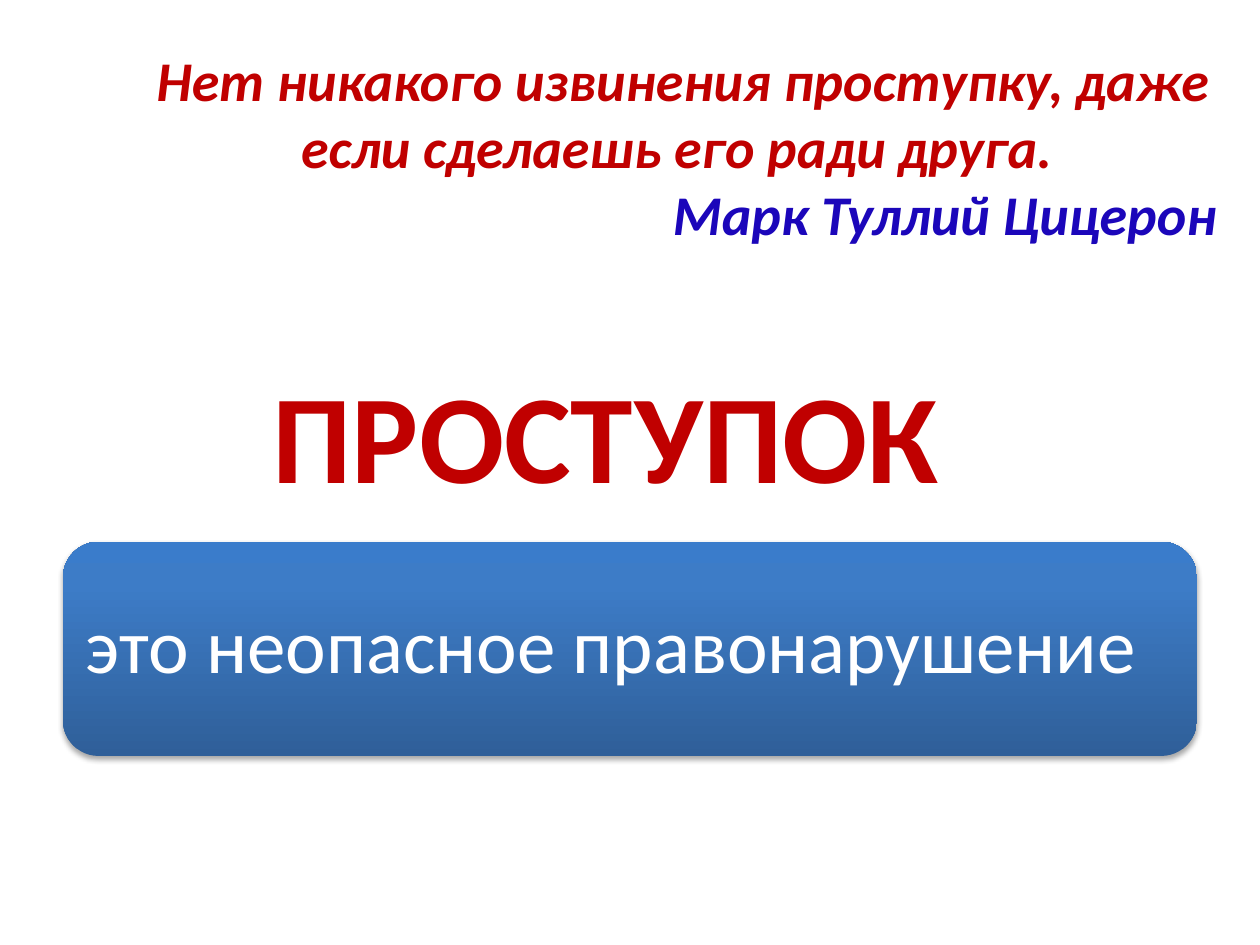
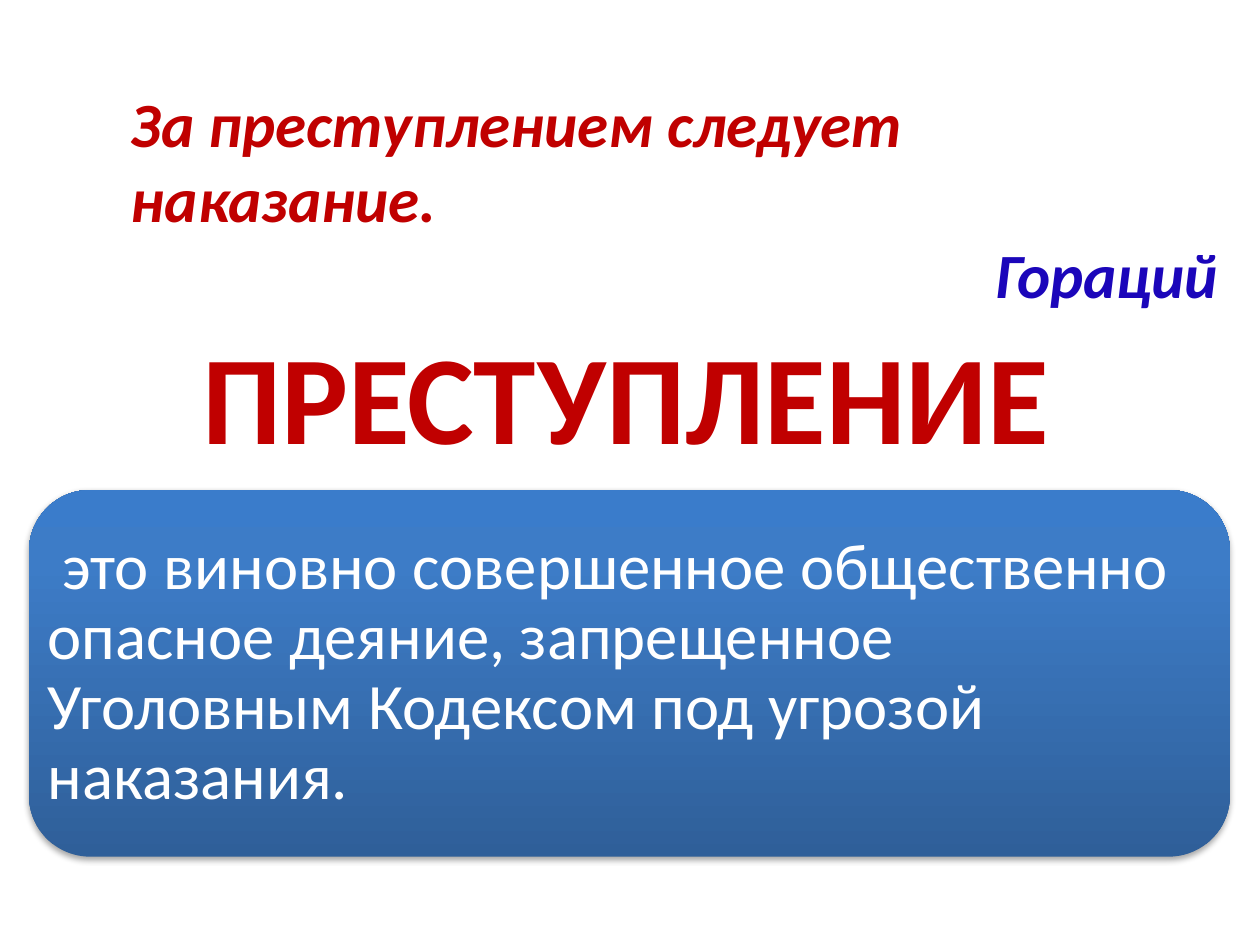
from dataclasses import dataclass

from lxml.etree import SubElement
from pptx import Presentation
from pptx.dml.color import RGBColor
from pptx.enum.shapes import MSO_SHAPE
from pptx.enum.text import MSO_ANCHOR, PP_ALIGN
from pptx.oxml.ns import qn
from pptx.util import Pt


@dataclass(frozen=True)
class Theme:
    font: str = "Calibri"
    red: str = "C00000"
    author_blue: str = "1B06BA"
    white: str = "FFFFFF"
    # Panel gradient from bottom to top: percent, colour
    panel_stops: tuple = ((0, "2F5F99"), (80, "3D7CC7"), (100, "3A7CCB"))
    shadow: str = "000000"
    term_size: int = 72


THEME = Theme()
CORNER = 0.16667  # corner radius as a share of the panel height
CORNER_TEXT_INSET = 0.29289  # share of the radius kept free of text


# Text helpers
def style_para(para, size, color, bold=False, italic=False, align=PP_ALIGN.LEFT):
    para.alignment = align
    font = para.font
    font.name = THEME.font
    font.size = Pt(size)
    font.bold = bold
    font.italic = italic
    font.color.rgb = RGBColor.from_string(color)


def add_text_box(page, left, top, width, height):
    box = page.shapes.add_textbox(Pt(left), Pt(top), Pt(width), Pt(height))
    box.text_frame.word_wrap = True
    return box.text_frame


def add_quote(page, area, words, author, size, align):
    frame = add_text_box(page, *area)
    quote = frame.paragraphs[0]
    quote.text = words
    style_para(quote, size, THEME.red, True, True, align)
    signature = frame.add_paragraph()
    signature.text = author
    style_para(signature, size, THEME.author_blue, True, True, PP_ALIGN.RIGHT)


def add_term(page, left, top, term):
    frame = add_text_box(page, left, top, 648, 90)
    frame.vertical_anchor = MSO_ANCHOR.MIDDLE
    para = frame.paragraphs[0]
    para.text = term
    style_para(para, THEME.term_size, THEME.red, bold=True, align=PP_ALIGN.CENTER)


# Panel effects
def add_gradient(properties):
    gradient = SubElement(properties, qn("a:gradFill"), rotWithShape="1")
    stops = SubElement(gradient, qn("a:gsLst"))
    for percent, color in THEME.panel_stops:
        stop = SubElement(stops, qn("a:gs"), pos=str(percent * 1000))
        SubElement(stop, qn("a:srgbClr"), val=color)
    SubElement(gradient, qn("a:lin"), ang=str(270 * 60000), scaled="0")


def add_shadow(properties):
    effects = SubElement(properties, qn("a:effectLst"))
    shadow = SubElement(effects, qn("a:outerShdw"), blurRad=str(Pt(3.1)),
                        dist=str(Pt(1.8)), dir=str(90 * 60000), rotWithShape="0")
    color = SubElement(shadow, qn("a:srgbClr"), val=THEME.shadow)
    SubElement(color, qn("a:alpha"), val="35000")


def add_definition(page, area, words, size, padding):
    left, top, width, height = area
    panel = page.shapes.add_shape(MSO_SHAPE.ROUNDED_RECTANGLE,
                                  Pt(left), Pt(top), Pt(width), Pt(height))
    add_gradient(panel._element.spPr)
    panel.line.fill.background()
    add_shadow(panel._element.spPr)

    # The rounded corners already hold the text away from the edge
    margin = Pt(padding - height * CORNER * CORNER_TEXT_INSET)
    frame = panel.text_frame
    frame.word_wrap = True
    frame.vertical_anchor = MSO_ANCHOR.MIDDLE
    frame.margin_left = frame.margin_right = margin
    frame.margin_top = frame.margin_bottom = margin
    para = frame.paragraphs[0]
    para.text = words
    para.line_spacing = 0.9
    style_para(para, size, THEME.white)


# Slides
def add_misdemeanour_page(page):
    add_term(page, 22.3, 202.3, "ПРОСТУПОК")
    add_definition(page, (36, 309.6, 648, 122.4),
                   "это неопасное правонарушение", 44, 13)
    add_quote(page, (78.5, 22.3, 624.2, 123.8),
              "Нет никакого извинения проступку, даже если сделаешь его ради друга. ",
              "Марк Туллий Цицерон", 32, PP_ALIGN.CENTER)


def add_crime_page(page):
    add_term(page, 33.8, 180, "ПРЕСТУПЛЕНИЕ")
    add_definition(page, (16.6, 280, 686.2, 209.5),
                   " это виновно совершенное общественно опасное деяние, "
                   "запрещенное Уголовным Кодексом под угрозой наказания.", 37, 10.8)
    add_quote(page, (67.7, 44.6, 635.5, 138.2),
              "За преступлением следует наказание.", "Гораций", 36, PP_ALIGN.LEFT)


def main():
    deck = Presentation()
    deck.slide_width, deck.slide_height = Pt(720), Pt(540)
    blank = deck.slide_layouts[6]
    for fill_page in (add_misdemeanour_page, add_crime_page):
        fill_page(deck.slides.add_slide(blank))
    deck.save("out.pptx")


if __name__ == "__main__":
    main()
